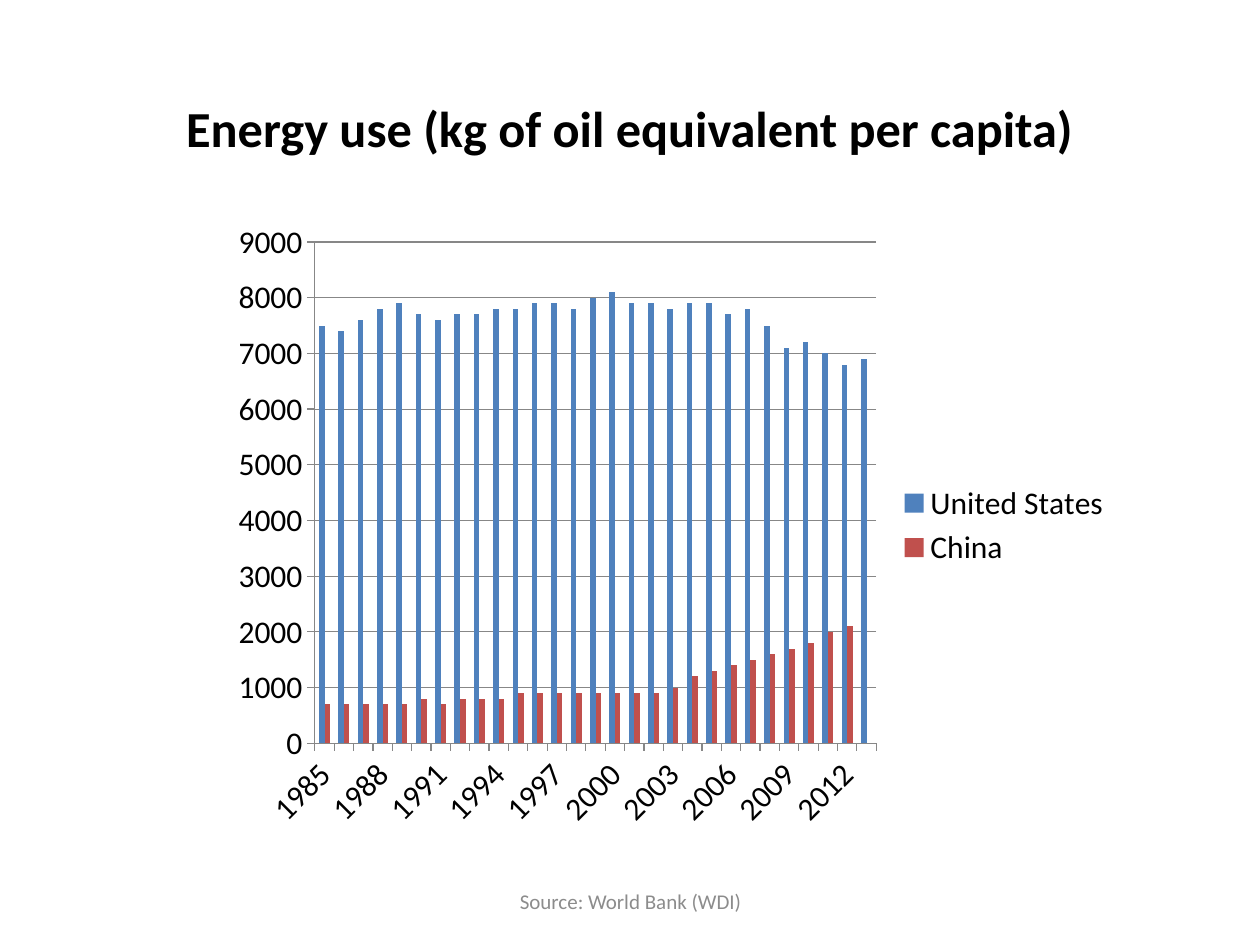
"""Build a slide comparing energy use per capita in two countries."""
from pptx import Presentation, util as u
from pptx.chart.data import CategoryChartData
from pptx.dml.color import RGBColor
from pptx.enum import chart as ch, text

BLACK = RGBColor(0x00, 0x00, 0x00)
GRAY = RGBColor(0x8C, 0x8C, 0x8C)
AXIS = RGBColor(0x87, 0x87, 0x87)
BLUE = RGBColor(0x4F, 0x81, 0xBD)
RED = RGBColor(0xC0, 0x50, 0x4D)
FONT = "Calibri"
WIDTH, HEIGHT = u.Inches(10), u.Inches(7.5)

YEARS = [str(year) for year in range(1985, 2014)]
SERIES = [
    ("United States", BLUE,
     [7500, 7400, 7600, 7800, 7900, 7700, 7600, 7700, 7700, 7800,
      7800, 7900, 7900, 7800, 8000, 8100, 7900, 7900, 7800, 7900,
      7900, 7700, 7800, 7500, 7100, 7200, 7000, 6800, 6900]),
    ("China", RED,
     [700, 700, 700, 700, 700, 800, 700, 800, 800, 800,
      900, 900, 900, 900, 900, 900, 900, 900, 1000, 1200,
      1300, 1400, 1500, 1600, 1700, 1800, 2000, 2100, None]),
]


def box(left, top, width, height):
    """Return a box in EMU from inches."""
    return tuple(u.Inches(v) for v in (left, top, width, height))


def set_attrs(obj, values):
    """Set every attribute named in a dict."""
    for name, value in values.items():
        setattr(obj, name, value)


def set_font(font, size, color, bold=False):
    """Give a font its face, size, weight and colour."""
    set_attrs(font, {"name": FONT, "size": u.Pt(size), "bold": bold})
    font.color.rgb = color


def write_text(sp, area, words, size, color, anchor, bold=False):
    """Place a shape and fill it with one centred line."""
    set_attrs(sp, dict(zip(("left", "top", "width", "height"), area)))
    tf = sp.text_frame
    set_attrs(tf, {"word_wrap": True, "vertical_anchor": anchor,
                   "auto_size": text.MSO_AUTO_SIZE.NONE})
    p = tf.paragraphs[0]
    p.alignment = text.PP_ALIGN.CENTER
    r = p.add_run()
    r.text = words
    set_font(r.font, size, color, bold)


def add_energy_chart(s, area):
    """Draw the clustered columns with their axes and legend."""
    data = CategoryChartData()
    data.categories = YEARS
    for name, _, values in SERIES:
        data.add_series(name, values)
    chart = s.shapes.add_chart(
        ch.XL_CHART_TYPE.COLUMN_CLUSTERED, *area, data).chart
    set_font(chart.font, 18, BLACK)
    set_attrs(chart, {"has_title": False, "has_legend": True})
    set_attrs(chart.legend, {"position": ch.XL_LEGEND_POSITION.RIGHT,
                             "include_in_layout": False})
    plot = chart.plots[0]
    set_attrs(plot, {"gap_width": 150, "overlap": 0, "vary_by_categories": False})
    for series, (_, color, _) in zip(plot.series, SERIES):
        series.format.fill.solid()
        series.format.fill.fore_color.rgb = color
    set_attrs(chart.value_axis, {"minimum_scale": 0, "maximum_scale": 9000,
                                 "major_unit": 1000, "has_major_gridlines": True})
    for axis in (chart.category_axis, chart.value_axis):
        set_attrs(axis, {"major_tick_mark": ch.XL_TICK_MARK.OUTSIDE,
                         "minor_tick_mark": ch.XL_TICK_MARK.NONE})
        axis.format.line.color.rgb = AXIS
    chart.value_axis.major_gridlines.format.line.color.rgb = AXIS


def main():
    """Build and save the slide."""
    prs = Presentation()
    set_attrs(prs, {"slide_width": WIDTH, "slide_height": HEIGHT})
    s = prs.slides.add_slide(prs.slide_layouts[5])
    write_text(s.shapes.title, box(0.5, 0.3, 9, 1),
               "Energy use (kg of oil equivalent per capita)",
               28.8, BLACK, text.MSO_ANCHOR.BOTTOM, True)
    add_energy_chart(s, box(1.75, 1.67, 7.17, 5))
    source_box = box(3.42, 6.95, 3.17, 0.4)
    write_text(s.shapes.add_textbox(*source_box), source_box,
               "Source: World Bank (WDI)", 12, GRAY, text.MSO_ANCHOR.MIDDLE)
    prs.save("out.pptx")


if __name__ == "__main__":
    main()
